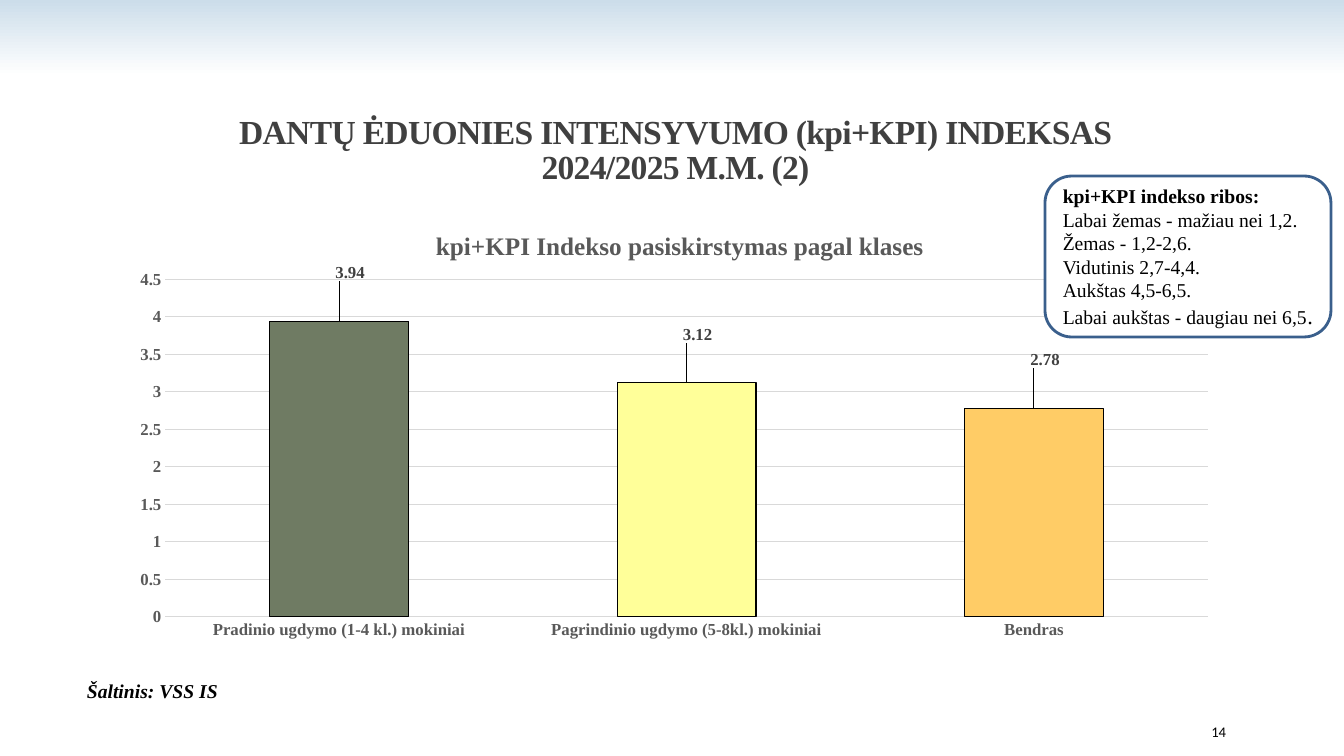
from lxml.etree import SubElement
from pptx import Presentation
from pptx.chart.data import CategoryChartData
from pptx.dml.color import RGBColor
from pptx.enum.chart import XL_CHART_TYPE, XL_LABEL_POSITION, XL_TICK_MARK
from pptx.enum.shapes import MSO_SHAPE
from pptx.enum.text import MSO_ANCHOR, PP_ALIGN
from pptx.oxml import parse_xml
from pptx.oxml.ns import nsdecls
from pptx.util import Emu, Pt

SCALE = 914400 / 100.8
SERIF = "Times New Roman"


def px(*lengths):
    return [Emu(round(length * SCALE)) for length in lengths]


def style(font, size, color, bold=False, name=SERIF):
    font.name, font.size, font.bold = name, Pt(size), bold
    font.color.rgb = RGBColor.from_string(color)


deck = Presentation()
deck.slide_width, deck.slide_height = px(1344, 756)
page = deck.slides.add_slide(deck.slide_layouts[6])

# Background fading to white
backdrop = page.background.fill
backdrop.gradient()
backdrop.gradient_angle = 270
for stop, (position, color) in zip(backdrop.gradient_stops, [(0, "CCDDEA"), (0.1, "FFFFFF")]):
    stop.position = position
    stop.color.rgb = RGBColor.from_string(color)

# Title, page number and source note
texts = [
    ((121, 31, 1109, 160), "DANTŲ ĖDUONIES INTENSYVUMO (kpi+KPI) INDEKSAS\v2024/2025 M.M. (2)",
     PP_ALIGN.CENTER, MSO_ANCHOR.BOTTOM, (24, "404040", True)),
    ((1092, 712, 144, 40), "14",
     PP_ALIGN.RIGHT, MSO_ANCHOR.MIDDLE, (10.5, "000000", False, "Calibri")),
    ((77, 674, 152, 34), "Šaltinis: VSS IS",
     PP_ALIGN.LEFT, MSO_ANCHOR.TOP, (14, "000000", True)),
]
boxes = []
for place, text, align, anchor, look in texts:
    box = page.shapes.add_textbox(*px(*place))
    box.text_frame.word_wrap = True
    box.text_frame.vertical_anchor = anchor
    para = box.text_frame.paragraphs[0]
    para.text, para.alignment = text, align
    for span in para.runs:
        style(span.font, *look)
    boxes.append(box)
title, number, source = [box.text_frame.paragraphs[0] for box in boxes]
title.line_spacing = 0.85
for span in title.runs:
    span.font._element.set("spc", "-50")
source.runs[0].font.italic = True
boxes[2].text_frame.word_wrap = False

# Column chart
data = CategoryChartData()
data.categories = ["Pradinio ugdymo (1-4 kl.) mokiniai",
                   "Pagrindinio ugdymo (5-8kl.) mokiniai", "Bendras"]
data.add_series("Series 1", [3.94, 3.12, 2.78])
chart = page.shapes.add_chart(XL_CHART_TYPE.COLUMN_CLUSTERED,
                              *px(121, 204, 1109, 444), data).chart
chart.has_legend = False
style(chart.font, 10, "000000", name="Calibri")
chart.has_title = True
heading = chart.chart_title.text_frame
heading.text = "kpi+KPI Indekso pasiskirstymas pagal klases"
style(heading.paragraphs[0].runs[0].font, 18, "595959", True)
chart.chart_title.include_in_layout = False

for axis in (chart.category_axis, chart.value_axis):
    axis.major_tick_mark = axis.minor_tick_mark = XL_TICK_MARK.NONE
    axis.format.line.fill.background()
    style(axis.tick_labels.font, 12, "595959", True)
scale = chart.value_axis
scale.minimum_scale, scale.maximum_scale, scale.major_unit = 0, 4.5, 0.5
grid = scale.major_gridlines.format.line
grid.color.rgb, grid.width = RGBColor.from_string("D9D9D9"), Pt(0.75)

# Columns and their shifted labels
plot = chart.plots[0]
plot.gap_width, plot.vary_by_categories = 150, False
layouts = []
columns = [("6F7B63", 0.01, -0.08), ("FFFF99", 0.01, -0.08), ("FFCC66", 0.01, -0.08)]
for index, (color, shift_x, shift_y) in enumerate(columns):
    point = plot.series[0].points[index]
    point.format.fill.solid()
    point.format.fill.fore_color.rgb = RGBColor.from_string(color)
    point.format.line.color.rgb = RGBColor.from_string("000000")
    point.format.line.width = Pt(0.75)
    style(point.data_label.font, 12, "404040", True)
    point.data_label.position = XL_LABEL_POSITION.OUTSIDE_END
    label = plot.series[0]._element.xpath("c:dLbls/c:dLbl")[index]
    layouts.append((label, 1, {"x": shift_x, "y": shift_y}))

# Manual places inside the chart
root = chart._chartSpace.chart
layouts.append((root.xpath("c:title")[0], 1,
                {"xMode": "edge", "yMode": "edge", "x": 0.28, "y": 0.05}))
layouts.append((root.plotArea, 0,
                {"layoutTarget": "inner", "xMode": "edge", "yMode": "edge",
                 "x": 0.04, "y": 0.17, "w": 0.94, "h": 0.76}))
for parent, order, values in layouts:
    for old in parent.xpath("c:layout"):
        parent.remove(old)
    layout = parse_xml(f"<c:layout {nsdecls('c')}><c:manualLayout/></c:layout>")
    for tag, value in values.items():
        SubElement(layout[0], layout.tag.replace("layout", tag)).set("val", str(value))
    parent.insert(order, layout)

# Index limits
limits = page.shapes.add_shape(MSO_SHAPE.ROUNDED_RECTANGLE, *px(1045, 176, 286, 161))
limits.shadow.inherit = False
limits.fill.solid()
limits.fill.fore_color.rgb = RGBColor.from_string("FFFFFF")
limits.line.color.rgb, limits.line.width = RGBColor.from_string("3A5F8C"), Pt(2)
frame = limits.text_frame
frame.word_wrap, frame.margin_right = True, 0
frame.vertical_anchor = MSO_ANCHOR.MIDDLE
frame.text = "\n".join([
    "kpi+KPI indekso ribos:", "Labai žemas - mažiau nei 1,2.", "Žemas - 1,2-2,6.",
    "Vidutinis 2,7-4,4.", "Aukštas 4,5-6,5.", "Labai aukštas - daugiau nei 6,5"])
for index, para in enumerate(frame.paragraphs):
    para.alignment = PP_ALIGN.LEFT
    style(para.runs[0].font, 14, "000000", index == 0)
period = frame.paragraphs[-1].add_run()
period.text = "."
style(period.font, 16, "000000")

deck.save("out.pptx")
